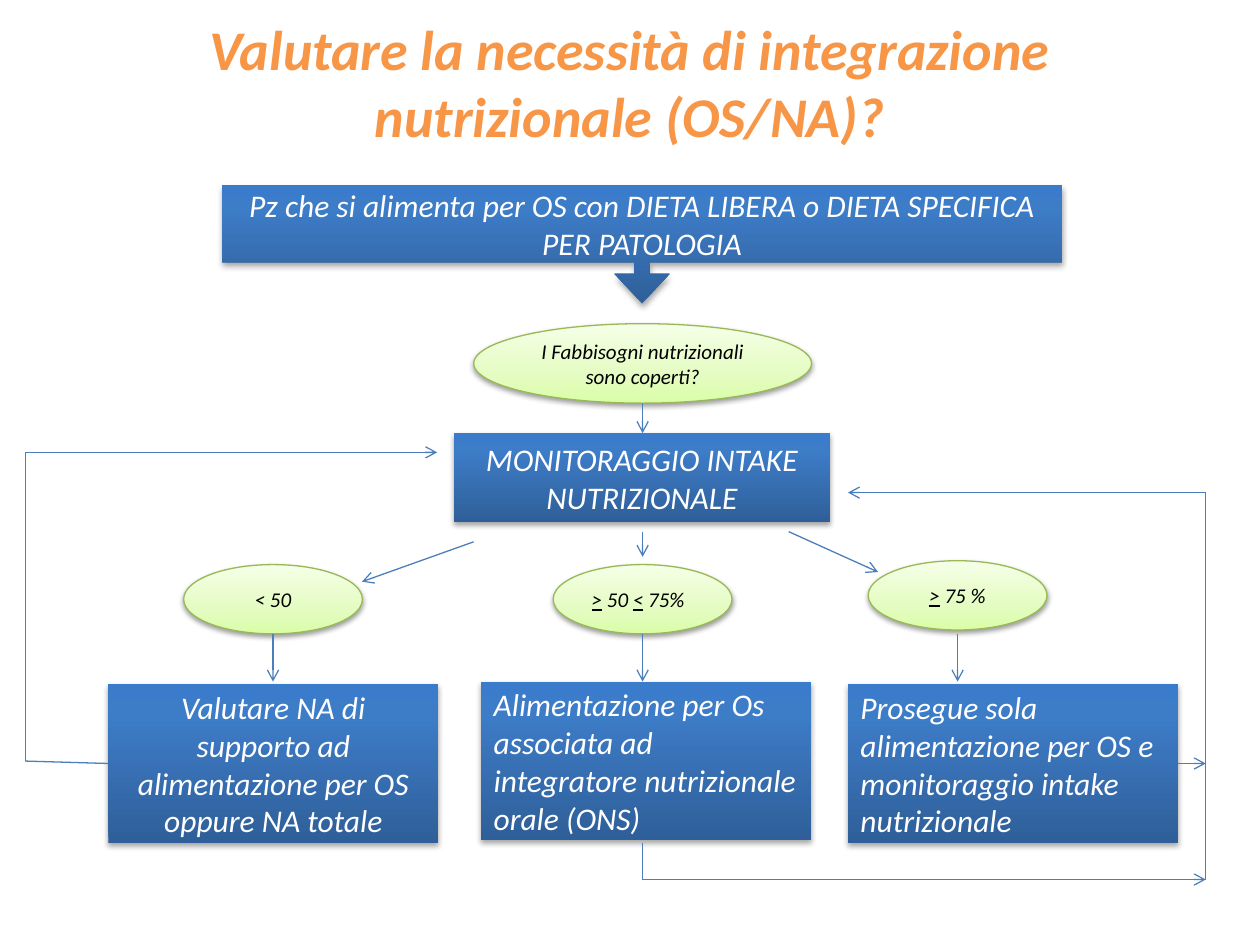
import copy
from dataclasses import dataclass

import pptx
import pptx.dml.color
import pptx.enum.shapes
import pptx.enum.text
import pptx.oxml
import pptx.oxml.ns
import pptx.util
from lxml import etree

Pt = pptx.util.Pt
Shape = pptx.enum.shapes.MSO_SHAPE
Align = pptx.enum.text.PP_ALIGN
qn = pptx.oxml.ns.qn


@dataclass(frozen=True)
class Theme:
    font: str = "Calibri"
    title_color: str = "F79646"
    step_text: str = "FFFFFF"
    range_text: str = "000000"
    range_border: str = "98B955"
    arrow: str = "4B7EBC"
    shadow: str = "000000"
    step_fill: tuple = ((0, "2F5F99"), (0.8, "3D7CC7"), (1, "3A7CCB"))
    range_fill: tuple = ((0, "DAFDA7"), (0.35, "E4FCC2"), (1, "F5FFE7"))
    title_size: int = 32
    step_size: int = 18
    range_size: int = 12
    line_width: float = 0.75


THEME = Theme()


def rgb(value):
    return pptx.dml.color.RGBColor.from_string(value)


def apply_format(target, values):
    for name, value in values.items():
        setattr(target, name, value)


def write_text(box, spans, size, color, align=Align.CENTER, bold=False):
    apply_format(box.text_frame, {
        "word_wrap": True,
        "vertical_anchor": pptx.enum.text.MSO_ANCHOR.MIDDLE,
    })
    para = box.text_frame.paragraphs[0]
    para.alignment = align
    for text, underline in spans:
        span = para.add_run()
        span.text = text
        apply_format(span.font, {
            "name": THEME.font, "size": Pt(size), "bold": bold,
            "italic": True, "underline": underline,
        })
        span.font.color.rgb = rgb(color)


def fill_gradient(shape, stops):
    shape.fill.gradient()
    shape.fill.gradient_angle = 90
    stop_list = next(shape._element.spPr.iter(qn("a:gsLst")))
    stop_list.append(copy.deepcopy(stop_list[-1]))
    for stop, (position, color) in zip(shape.fill.gradient_stops, stops):
        stop.position = position
        stop.color.rgb = rgb(color)


def add_shadow(shape, distance, opacity):
    shape.shadow.inherit = False
    effects = shape._element.spPr.find(qn("a:effectLst"))
    shadow = etree.SubElement(effects, qn("a:outerShdw"), {
        "blurRad": str(Pt(3.1)), "dist": str(Pt(distance)),
        "dir": "5400000", "rotWithShape": "0",
    })
    color = etree.SubElement(shadow, qn("a:srgbClr"), val=THEME.shadow)
    etree.SubElement(color, qn("a:alpha"), val=str(opacity * 1000))


def add_title(page, text, frame):
    box = page.shapes.add_textbox(*map(Pt, frame))
    write_text(box, [(text, False)], THEME.title_size, THEME.title_color, bold=True)


def add_step(page, text, frame, align=Align.CENTER, kind=Shape.RECTANGLE, adjustments=()):
    shape = page.shapes.add_shape(kind, *map(Pt, frame))
    for index, value in enumerate(adjustments):
        shape.adjustments[index] = value
    fill_gradient(shape, THEME.step_fill)
    shape.line.fill.background()
    add_shadow(shape, 1.8, 35)
    write_text(shape, [(text, False)], THEME.step_size, THEME.step_text, align)


def add_range(page, spans, frame, align=Align.CENTER):
    shape = page.shapes.add_shape(Shape.OVAL, *map(Pt, frame))
    fill_gradient(shape, THEME.range_fill)
    shape.line.color.rgb = rgb(THEME.range_border)
    shape.line.width = Pt(THEME.line_width)
    add_shadow(shape, 1.6, 38)
    write_text(shape, spans, THEME.range_size, THEME.range_text, align)


def add_path(page, *points, arrow=True):
    for index, (start, end) in enumerate(zip(points, points[1:]), 2):
        line = page.shapes.add_connector(
            pptx.enum.shapes.MSO_CONNECTOR.STRAIGHT, *map(Pt, start + end))
        line.line.color.rgb = rgb(THEME.arrow)
        line.line.width = Pt(THEME.line_width)
        properties = line._element.spPr
        if arrow and index == len(points):
            etree.SubElement(properties.find(qn("a:ln")), qn("a:tailEnd"), type="arrow")
        etree.SubElement(properties, qn("a:effectLst"))


def main():
    deck = pptx.Presentation()
    apply_format(deck, {"slide_width": Pt(720), "slide_height": Pt(540)})
    page = deck.slides.add_slide(deck.slide_layouts[6])

    add_title(page, "Valutare la necessità di integrazione nutrizionale (OS/NA)?",
              (36, 21.6, 648, 49.7))
    add_step(page, "Pz che si alimenta per OS con DIETA LIBERA o DIETA SPECIFICA PER PATOLOGIA",
             (126.7, 105.8, 480.4, 67.7), kind=Shape.DOWN_ARROW_CALLOUT,
             adjustments=(0.134, 0.231, 0.25, 0.65))
    add_range(page, [("I Fabbisogni nutrizionali sono coperti?", False)],
              (270.7, 185, 193, 45.4))
    add_step(page, "MONITORAGGIO INTAKE NUTRIZIONALE", (259.2, 247.5, 215.3, 51))

    left, middle, right = 156, 367.2, 547.2
    branches = [
        (left, 322.6, [("< 50", False)], Align.CENTER,
         61.9, 391, "Valutare NA di supporto ad alimentazione per OS oppure NA totale",
         Align.CENTER),
        (middle, 322.6, [(">", True), (" 50 ", False), ("<", True), (" 75%", False)], Align.LEFT,
         275, 389.5, "Alimentazione per Os associata ad integratore nutrizionale orale (ONS)",
         Align.LEFT),
        (right, 320.4, [(">", True), (" 75 %", False)], Align.CENTER,
         484.6, 391, "Prosegue sola alimentazione per OS e monitoraggio intake nutrizionale",
         Align.LEFT),
    ]
    range_width = 102.2
    for center, range_top, spans, range_align, step_left, step_top, text, step_align in branches:
        add_range(page, spans, (center - range_width / 2, range_top, range_width, 39.6),
                  range_align)
        add_step(page, text, (step_left, step_top, 188.6, 90.7), step_align)
        add_path(page, (center, 362.2), (center, 389.5))

    add_path(page, (middle, 230.4), (middle, 247.5))
    add_path(page, (270.7, 309.6), (206.9, 332.4))
    add_path(page, (middle, 303.8), (middle, 318.2))
    add_path(page, (450.7, 303.8), (501.8, 326.9))

    return_left, return_right, return_bottom = 14.4, 689, 502.6
    add_path(page, (61.9, 436.3), (return_left, 434.9), (return_left, 258.5), (249.8, 258.5))
    add_path(page, (middle, 481.7), (middle, return_bottom), (return_right, return_bottom))
    add_path(page, (673.2, 436.3), (return_right, 436.3))
    add_path(page, (return_right, return_bottom), (return_right, 281.5), (484.6, 281.5))

    deck.save("out.pptx")


if __name__ == "__main__":
    main()
